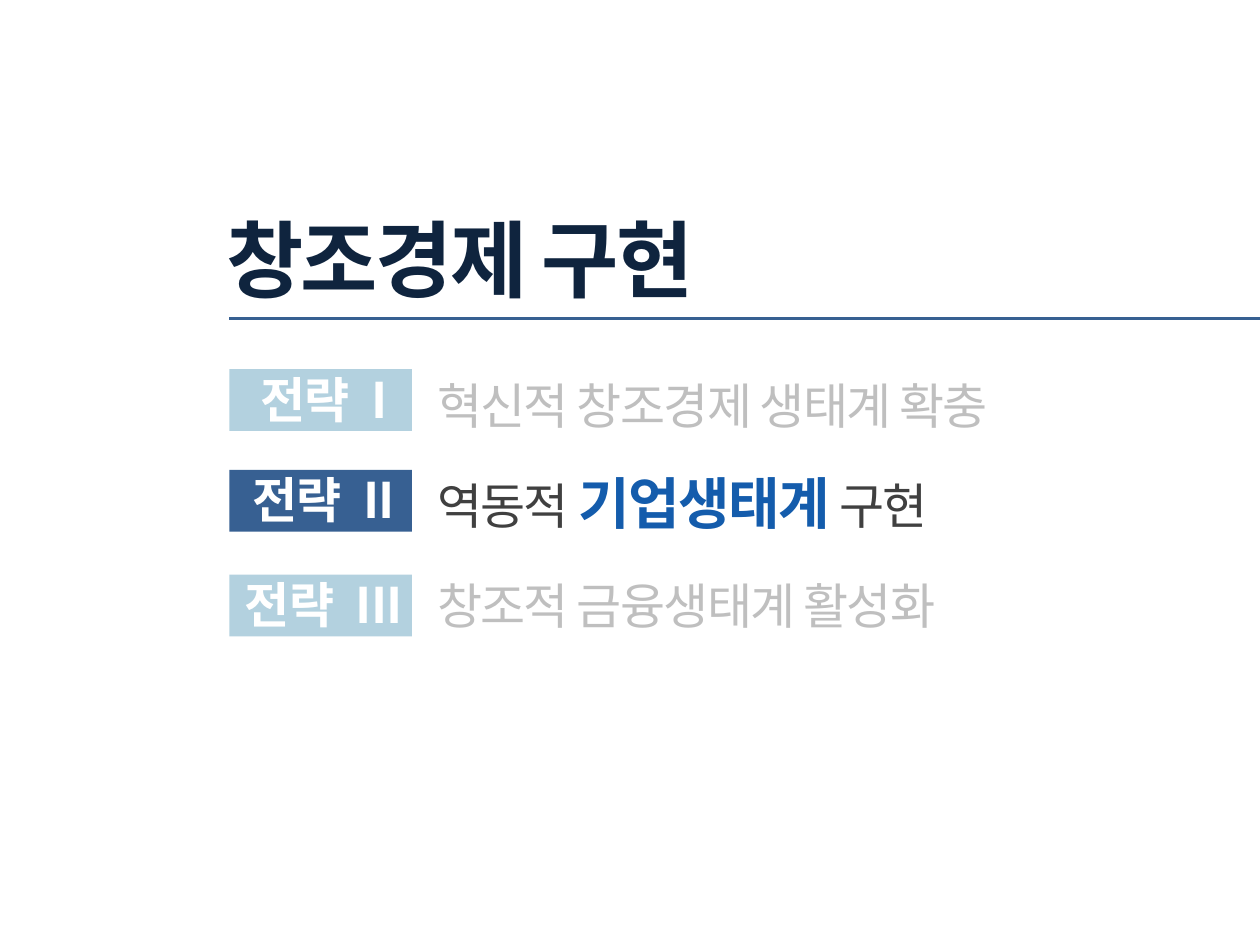
from dataclasses import dataclass

from lxml.etree import SubElement
from pptx import Presentation
from pptx.dml.color import RGBColor
from pptx.enum.shapes import MSO_CONNECTOR, MSO_SHAPE
from pptx.enum.text import MSO_ANCHOR, PP_ALIGN
from pptx.oxml.ns import qn
from pptx.slide import Slide
from pptx.text.text import Font, TextFrame
from pptx.util import Inches, Pt

FONT = "Noto Sans CJK KR"
NAVY = RGBColor(0x0F, 0x24, 0x3E)
BLUE = RGBColor(0x37, 0x60, 0x92)
BRIGHT_BLUE = RGBColor(0x14, 0x5C, 0xAC)
PALE_BLUE = RGBColor(0xB3, 0xD1, 0xDF)
DARK_GRAY = RGBColor(0x40, 0x40, 0x40)
LIGHT_GRAY = RGBColor(0xBF, 0xBF, 0xBF)
WHITE = RGBColor(0xFF, 0xFF, 0xFF)

LEFT = 1.82
RULE_Y = 2.53


@dataclass(frozen=True)
class Phrase:
    text: str
    color: RGBColor
    size: float = 28
    bold: bool = False
    tracking: float = -0.9


@dataclass(frozen=True)
class Strategy:
    numeral: str
    badge_top: float
    badge_color: RGBColor
    text_top: float
    text_height: float
    phrases: list[Phrase]


STRATEGIES = [
    Strategy("I", 2.93, PALE_BLUE, 2.93, 0.57,
             [Phrase("혁신적 창조경제 생태계 확충", LIGHT_GRAY)]),
    Strategy("II", 3.73, BLUE, 3.67, 0.64,
             [Phrase("역동적 ", DARK_GRAY),
              Phrase("기업생태계", BRIGHT_BLUE, size=32, bold=True),
              Phrase(" 구현", DARK_GRAY)]),
    Strategy("III", 4.56, PALE_BLUE, 4.52, 0.57,
             [Phrase("창조적 금융생태계 활성화", LIGHT_GRAY)]),
]


def style_font(font: Font, phrase: Phrase) -> None:
    font.size = Pt(phrase.size)
    font.bold = phrase.bold
    font.color.rgb = phrase.color
    font._element.set("spc", str(round(phrase.tracking * 100)))


def write_phrases(frame: TextFrame, phrases: list[Phrase], align: PP_ALIGN) -> None:
    paragraph = frame.paragraphs[0]
    paragraph.alignment = align
    paragraph.font.name = FONT
    SubElement(paragraph.font._element, qn("a:ea"), typeface=FONT)
    for phrase in phrases:
        run = paragraph.add_run()
        run.text = phrase.text
        run.font.name = FONT
        SubElement(run.font._element, qn("a:ea"), typeface=FONT)
        style_font(run.font, phrase)


def add_text(slide: Slide, left: float, top: float, width: float, height: float,
             phrases: list[Phrase], align: PP_ALIGN = PP_ALIGN.LEFT) -> None:
    box = slide.shapes.add_textbox(Inches(left), Inches(top), Inches(width), Inches(height))
    box.text_frame.word_wrap = True
    write_phrases(box.text_frame, phrases, align)


def add_title(slide: Slide) -> None:
    title = slide.shapes.title
    title.left, title.top = Inches(0.49), Inches(1.6)
    title.width, title.height = Inches(6.32), Inches(0.91)
    title.text_frame.vertical_anchor = MSO_ANCHOR.TOP
    write_phrases(title.text_frame,
                  [Phrase("창조경제 구현", NAVY, size=48, bold=True, tracking=-1.5)],
                  PP_ALIGN.CENTER)


def add_rule(slide: Slide) -> None:
    rule = slide.shapes.add_connector(MSO_CONNECTOR.STRAIGHT, Inches(LEFT), Inches(RULE_Y),
                                      Inches(10), Inches(RULE_Y))
    rule.line.color.rgb = BLUE
    rule.line.width = Pt(1.5)
    SubElement(rule._element.spPr, qn("a:effectLst"))


def add_strategy(slide: Slide, strategy: Strategy) -> None:
    badge = slide.shapes.add_shape(MSO_SHAPE.RECTANGLE, Inches(LEFT),
                                   Inches(strategy.badge_top), Inches(1.45), Inches(0.49))
    badge.shadow.inherit = False
    badge.fill.solid()
    badge.fill.fore_color.rgb = strategy.badge_color
    badge.line.fill.background()

    # The wide tracking on the space sets the numeral apart from the word.
    label = [Phrase(text, WHITE, bold=True, tracking=tracking)
             for text, tracking in (("전략", -0.4), (" ", 6), (strategy.numeral, -0.4))]
    add_text(slide, LEFT - 0.06, strategy.badge_top - 0.05, 1.62, 0.57, label, PP_ALIGN.CENTER)
    add_text(slide, 3.37, strategy.text_top, 5.12, strategy.text_height, strategy.phrases)


def main() -> None:
    prs = Presentation()
    prs.slide_width, prs.slide_height = Inches(10), Inches(7.5)
    slide = prs.slides.add_slide(prs.slide_layouts[5])
    add_title(slide)
    add_rule(slide)
    for strategy in STRATEGIES:
        add_strategy(slide, strategy)
    prs.save("out.pptx")


if __name__ == "__main__":
    main()
